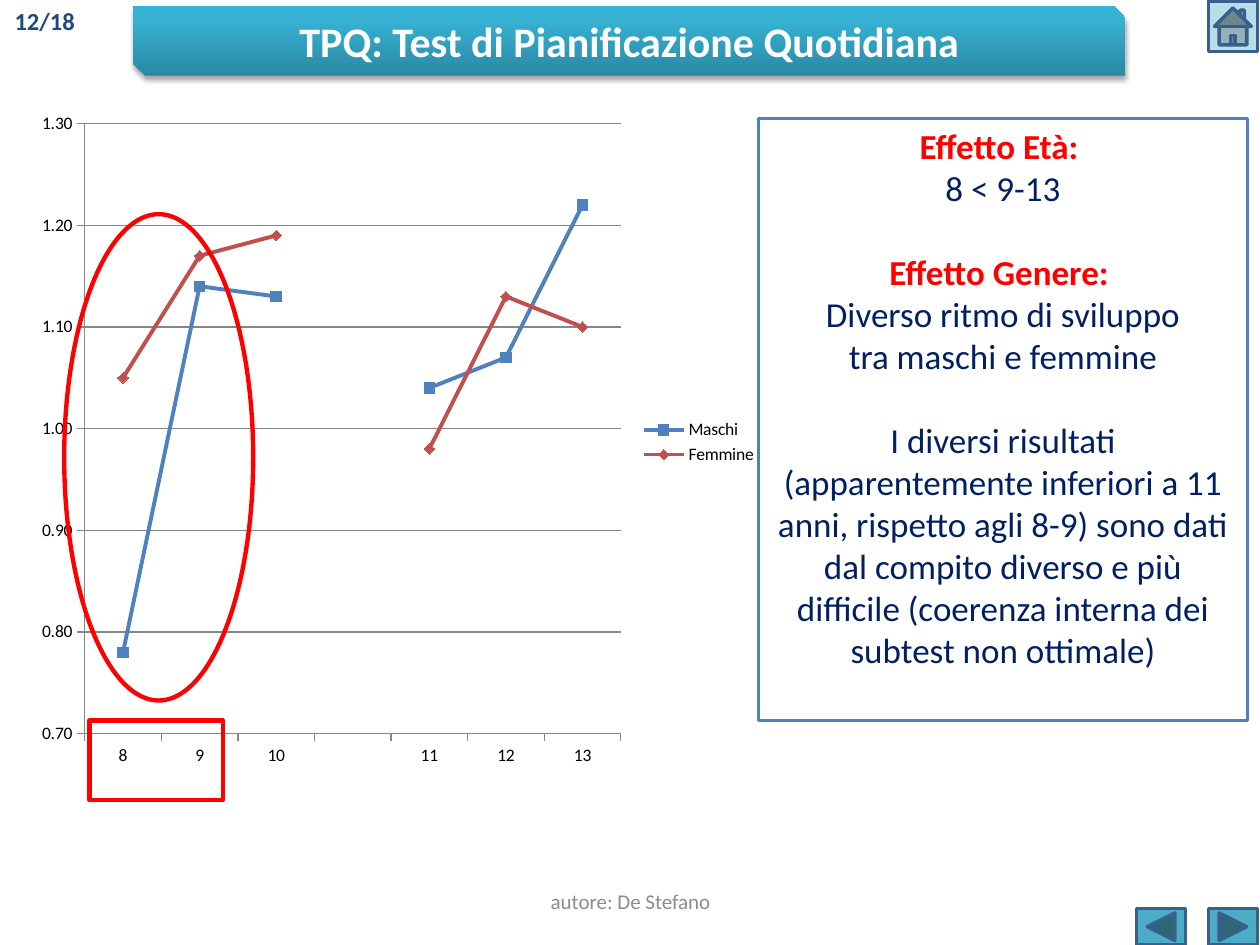
from lxml.etree import SubElement
from pptx import Presentation
from pptx.chart.data import CategoryChartData
from pptx.dml.color import RGBColor
from pptx.enum.chart import (XL_CHART_TYPE, XL_LEGEND_POSITION,
                             XL_MARKER_STYLE, XL_TICK_MARK)
from pptx.enum.shapes import MSO_SHAPE
from pptx.enum.text import MSO_ANCHOR, PP_ALIGN
from pptx.oxml.ns import qn
from pptx.util import Inches, Pt

RED, NAVY, BLUE, EDGE = "FF0000", "002060", "4F81BD", "3A5F8C"


def rgb(code):
    return RGBColor.from_string(code)


def add(parent, tag, **attrs):
    return SubElement(parent, qn(tag), {k: str(v) for k, v in attrs.items()})


class Deck:
    font = "Calibri"

    def __init__(self):
        self.prs = Presentation()
        self.prs.slide_width, self.prs.slide_height = Inches(10), Inches(7.5)
        self.slide = self.prs.slides.add_slide(self.prs.slide_layouts[6])

    def shape(self, kind, box, fill=None, line=None, width=2):
        item = self.slide.shapes.add_shape(kind, *map(Inches, box))
        item.shadow.inherit = False
        if fill:
            item.fill.solid()
            item.fill.fore_color.rgb = rgb(fill)
        else:
            item.fill.background()
        if line:
            item.line.color.rgb = rgb(line)
            item.line.width = Pt(width)
        else:
            item.line.fill.background()
        return item

    def label(self, box):
        return self.slide.shapes.add_textbox(*map(Inches, box))

    def text(self, item, rows, size, anchor=MSO_ANCHOR.TOP):
        """Each row is text, colour, bold, space before in points."""
        frame = item.text_frame
        frame.word_wrap = True
        frame.vertical_anchor = anchor
        for i, (words, color, bold, gap) in enumerate(rows):
            para = frame.add_paragraph() if i else frame.paragraphs[0]
            para.text = words
            para.alignment = PP_ALIGN.CENTER
            para.space_before = Pt(gap)
            para.font.name = self.font
            para.font.size = Pt(size)
            para.font.bold = bold
            para.font.color.rgb = rgb(color)

    def banner(self, box, stops):
        item = self.shape(MSO_SHAPE.SNIP_2_DIAG_RECTANGLE, box)
        item.fill.gradient()
        item.fill.gradient_angle = 90
        props = item.element.spPr
        # Three colour stops
        group = props.find(qn("a:gradFill")).find(qn("a:gsLst"))
        group.clear()
        for pos, code in stops:
            stop = add(group, "a:gs", pos=pos * 1000)
            add(stop, "a:srgbClr", val=code)
        # Soft shadow below
        cast = add(props.find(qn("a:effectLst")), "a:outerShdw",
                   blurRad=Pt(3.1), dist=Pt(1.8), dir=5400000, rotWithShape=0)
        add(add(cast, "a:srgbClr", val="000000"), "a:alpha", val=35000)
        return item

    def chart(self, box, cats, series, plot):
        data = CategoryChartData(number_format="0.00")
        data.categories = cats
        for name, vals, *_ in series:
            data.add_series(name, vals)
        chart = self.slide.shapes.add_chart(
            XL_CHART_TYPE.LINE_MARKERS, *map(Inches, box), data).chart
        chart.has_title = False
        chart.font.name, chart.font.size = self.font, Pt(10)
        chart.font.color.rgb = rgb("000000")
        chart.has_legend = True
        chart.legend.position = XL_LEGEND_POSITION.RIGHT
        chart.legend.include_in_layout = False

        # Axes
        axis = chart.value_axis
        axis.minimum_scale, axis.maximum_scale, axis.major_unit = 0.7, 1.3, 0.1
        axis.tick_labels.number_format = "#,##0.00"
        axis.tick_labels.number_format_is_linked = False
        axis.has_major_gridlines = True
        for part in (axis, chart.category_axis, axis.major_gridlines):
            part.format.line.color.rgb = rgb("868686")
        for part in (axis, chart.category_axis):
            part.major_tick_mark = XL_TICK_MARK.OUTSIDE

        # Lines and markers
        chart.plots[0].vary_by_categories = False
        for line, (_, _, color, style) in zip(chart.plots[0].series, series):
            line.smooth = False
            line.format.line.color.rgb = rgb(color)
            line.format.line.width = Pt(2.25)
            mark = line.marker
            mark.style, mark.size = style, 6
            mark.format.fill.solid()
            mark.format.fill.fore_color.rgb = rgb(color)
            mark.format.line.color.rgb = rgb(color)

        # Fixed plot area
        area = chart.plots[0]._element.getparent()
        old = area.find(qn("c:layout"))
        if old is not None:
            area.remove(old)
        frame = add(area, "c:layout")
        area.insert(0, frame)
        inner = add(frame, "c:manualLayout")
        add(inner, "c:layoutTarget", val="inner")
        for tag in ("xMode", "yMode"):
            add(inner, "c:" + tag, val="edge")
        for tag, val in zip("xywh", plot):
            add(inner, "c:" + tag, val=val)


def main():
    deck = Deck()

    # Header: home button, page count, title
    deck.shape(MSO_SHAPE.ACTION_BUTTON_HOME, (9.59, 0.01, 0.39, 0.4),
               "B7DEE8", EDGE)
    page = deck.shape(MSO_SHAPE.RECTANGLE, (0, 0, 0.71, 0.34), "FFFFFF")
    deck.text(page, [("12/18", "1F497D", True, 0)], 14)
    title = deck.banner((1.06, 0.05, 7.87, 0.55),
                        [(0, "2A88A2"), (80, "37B1D2"), (100, "34B4D6")])
    deck.text(title, [("TPQ: Test di Pianificazione Quotidiana",
                       "FFFFFF", True, 0)], 24, MSO_ANCHOR.MIDDLE)

    # Page buttons
    for kind, left in ((MSO_SHAPE.ACTION_BUTTON_FORWARD_OR_NEXT, 9.59),
                       (MSO_SHAPE.ACTION_BUTTON_BACK_OR_PREVIOUS, 9.02)):
        deck.shape(kind, (left, 7.21, 0.39, 0.29), "4BACC6", EDGE)

    # Findings
    notes = deck.shape(MSO_SHAPE.RECTANGLE, (6.02, 0.94, 3.88, 4.78),
                       "FFFFFF", BLUE)
    deck.text(notes, [
        ("Effetto Età: ", RED, True, 0),
        ("8 < 9-13", NAVY, False, 0),
        ("Effetto Genere: ", RED, True, 24),
        ("Diverso ritmo di sviluppo", NAVY, False, 0),
        ("tra maschi e femmine", NAVY, False, 0),
        ("I diversi risultati (apparentemente inferiori a 11 anni, rispetto "
         "agli 8-9) sono dati dal compito diverso e più difficile (coerenza "
         "interna dei subtest non ottimale)", NAVY, False, 24)], 20)

    # Scores by age and gender
    deck.chart((0.2, 0.82, 5.91, 5.38), ["8", "9", "10", "", "11", "12", "13"], [
        ("Maschi", (0.78, 1.14, 1.13, None, 1.04, 1.07, 1.22),
         BLUE, XL_MARKER_STYLE.SQUARE),
        ("Femmine", (1.05, 1.17, 1.19, None, 0.98, 1.13, 1.1),
         "C0504D", XL_MARKER_STYLE.DIAMOND)], (0.08, 0.03, 0.72, 0.9))

    # Highlights on ages 8 and 9
    for kind, box in ((MSO_SHAPE.RECTANGLE, (0.71, 5.72, 1.06, 0.63)),
                      (MSO_SHAPE.OVAL, (0.51, 1.7, 1.5, 3.86))):
        deck.shape(kind, box, line=RED, width=2.5)

    # Footer
    deck.text(deck.label((3.42, 6.95, 3.17, 0.4)),
              [("autore: De Stefano", "8C8C8C", False, 0)], 12,
              MSO_ANCHOR.MIDDLE)
    deck.prs.save("out.pptx")


if __name__ == "__main__":
    main()
